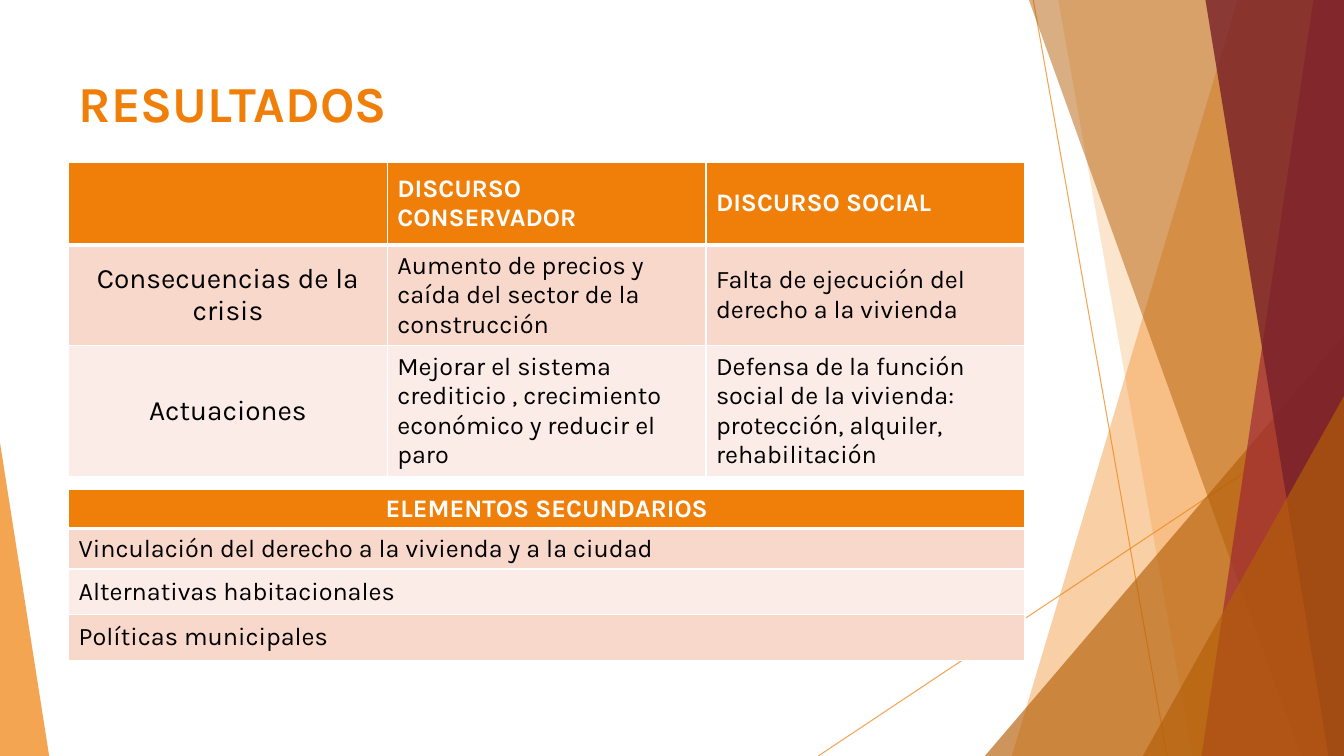
"""Build the RESULTADOS slide: two result tables beside a band of translucent facets."""
from lxml import etree
from pptx import Presentation
from pptx.dml.color import RGBColor
from pptx.enum.shapes import MSO_CONNECTOR, MSO_SHAPE
from pptx.enum.text import MSO_ANCHOR, MSO_AUTO_SIZE, PP_ALIGN
from pptx.oxml.ns import qn
from pptx.util import Cm, Pt

STRAIGHT = MSO_CONNECTOR.STRAIGHT
TRIANGLE = MSO_SHAPE.ISOSCELES_TRIANGLE
TOP, MIDDLE = MSO_ANCHOR.TOP, MSO_ANCHOR.MIDDLE
LEFT, CENTER = PP_ALIGN.LEFT, PP_ALIGN.CENTER
NO_AUTOFIT = MSO_AUTO_SIZE.NONE

ORANGE = RGBColor(0xF0, 0x7F, 0x09)
BROWN = RGBColor(0xB4, 0x5F, 0x07)
RED = RGBColor(0x9F, 0x29, 0x36)
WINE = RGBColor(0x77, 0x1F, 0x28)
PINK = RGBColor(0xF9, 0xD8, 0xCC)
PALE_PINK = RGBColor(0xFC, 0xEC, 0xE7)
WHITE = RGBColor(0xFF, 0xFF, 0xFF)
BLACK = RGBColor(0x00, 0x00, 0x00)
FONT = "Karla"
PAGE_WIDTH, PAGE_HEIGHT = Cm(33.87), Cm(19.05)

deck = Presentation()
deck.slide_width, deck.slide_height = PAGE_WIDTH, PAGE_HEIGHT
page = deck.slides.add_slide(deck.slide_layouts[5])
shapes = page.shapes


def add_band(top_left, bottom_left):
    """Add a facet that runs from a slanted left side to the page's right edge."""
    outline = shapes.build_freeform(Cm(top_left), 0)
    outline.add_line_segments([(PAGE_WIDTH, 0), (PAGE_WIDTH, PAGE_HEIGHT), (Cm(bottom_left), PAGE_HEIGHT)])
    return outline.convert_to_shape()


def add_triangle(left, top, right, apex):
    """Add a triangle that stands on the page's bottom edge."""
    triangle = shapes.add_shape(TRIANGLE, left, top, right - left, PAGE_HEIGHT - top)
    triangle.adjustments[0] = apex
    return triangle


for start, end in [
    ((Cm(26.04), 0), (Cm(29.41), PAGE_HEIGHT)),
    ((PAGE_WIDTH, Cm(10.24)), (Cm(20.62), PAGE_HEIGHT)),
]:
    ray = shapes.add_connector(STRAIGHT, *start, *end)
    ray.line.color.rgb = ORANGE
    ray.line.width = Pt(0.75)
    etree.SubElement(ray.line._ln.find(".//" + qn("a:srgbClr")), qn("a:alpha"), val="70000")
    etree.SubElement(ray._element.spPr, qn("a:effectLst"))

for facet, color, opacity in [
    (add_band(31.19, 25.5), ORANGE, 36),
    (add_band(26.67, 30.05), ORANGE, 20),
    (add_triangle(Cm(24.82), Cm(8.46), PAGE_WIDTH, 1), BROWN, 66),
    (add_band(25.93, 32.79), BROWN, 50),
    (add_band(33.1, 30.28), RED, 70),
    (add_band(30.38, 33.48), WINE, 80),
    (add_triangle(Cm(28.8), Cm(9.98), PAGE_WIDTH, 1), BROWN, 66),
    (add_triangle(0, Cm(11.15), Cm(1.24), 0), ORANGE, 70),
]:
    facet.shadow.inherit = False
    facet.line.fill.background()
    facet.fill.solid()
    facet.fill.fore_color.rgb = color
    tint = facet._element.spPr.find(".//" + qn("a:srgbClr"))
    etree.SubElement(tint, qn("a:alpha"), val=str(opacity * 1000))

title = shapes.title
title.left, title.top, title.width, title.height = Cm(1.73), Cm(1.68), Cm(26.09), Cm(3)
title.text_frame.text = "RESULTADOS"
title.text_frame.auto_size = NO_AUTOFIT
title.text_frame.vertical_anchor = TOP
para = title.text_frame.paragraphs[0]
para.alignment = LEFT
para.font.name, para.font.size, para.font.bold = FONT, Pt(36), True
para.font.color.rgb = ORANGE

discourses = [
    ["", "DISCURSO CONSERVADOR", "DISCURSO SOCIAL"],
    [
        "Consecuencias de la crisis",
        "Aumento de precios y caída del sector de la construcción",
        "Falta de ejecución del derecho a la vivienda",
    ],
    [
        "Actuaciones",
        "Mejorar el sistema crediticio , crecimiento económico y reducir el paro",
        "Defensa de la función social de la vivienda: protección, alquiler, rehabilitación",
    ],
]
secondary = [
    ["ELEMENTOS SECUNDARIOS"],
    ["Vinculación del derecho a la vivienda y a la ciudad"],
    ["Alternativas habitacionales"],
    ["Políticas municipales"],
]

for rows, top, column_width, heights in [
    (discourses, 4.09, 8.03, [2.08, 2.54, 3.3]),
    (secondary, 12.32, 24.1, [1, 1.02, 1.14, 1.17]),
]:
    columns = len(rows[0])
    table = shapes.add_table(
        len(rows), columns, Cm(1.73), Cm(top), Cm(column_width * columns), Cm(sum(heights))
    ).table
    for column in table.columns:
        column.width = Cm(column_width)
    for r, texts in enumerate(rows):
        table.rows[r].height = Cm(heights[r])
        header = r == 0
        for c, text in enumerate(texts):
            cell = table.cell(r, c)
            row_label = columns > 1 and c == 0
            edges = {"L": 1, "R": 1, "T": 3 if r == 1 else 1, "B": 3 if header else 1}
            for side, points in edges.items():
                edge = etree.SubElement(cell._tc.get_or_add_tcPr(), qn("a:ln" + side), w=str(Pt(points)))
                paint = etree.SubElement(edge, qn("a:solidFill"))
                etree.SubElement(paint, qn("a:srgbClr"), val=str(WHITE))
            cell.fill.solid()
            cell.fill.fore_color.rgb = ORANGE if header else PINK if r % 2 else PALE_PINK
            cell.vertical_anchor = MIDDLE
            cell.text = text
            para = cell.text_frame.paragraphs[0]
            para.alignment = CENTER if row_label or (header and columns == 1) else LEFT
            para.font.name, para.font.bold = FONT, header
            para.font.size = Pt(20 if row_label else 18)
            para.font.color.rgb = WHITE if header else BLACK

deck.save("out.pptx")
